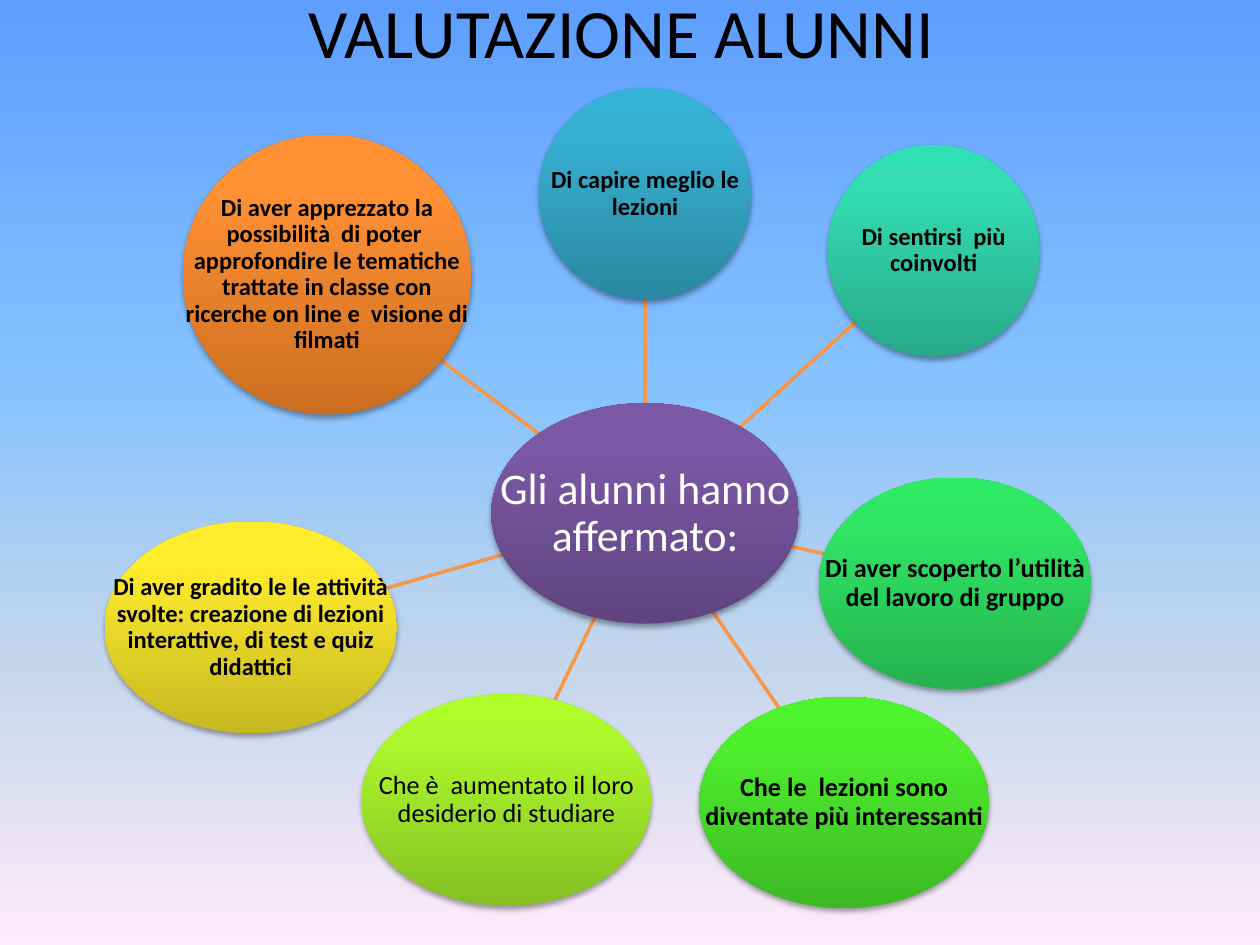
import math

import lxml.etree
import pptx
import pptx.dml.color
import pptx.enum.shapes
import pptx.enum.text
import pptx.oxml
import pptx.oxml.ns
import pptx.util

qn = pptx.oxml.ns.qn
CELL = pptx.util.Inches(0.1)  # the slide is a grid of 100 columns by 75 rows

COLORS = {
    "black": "000000",
    "white": "FFFFFF",
    "spoke": "F79646",
    "sky": ("5E9EFF", "85C2FF", "C4D6EB", "FFEBFA"),
    "purple": ("5F4480", "7B58A6", "7C57A8"),
    "blue": ("2A88A2", "37B1D2", "34B4D6"),
    "teal": ("27AA89", "33DCB2", "30E1B5"),
    "emerald": ("25B24E", "30E765", "2DEB64"),
    "green": ("3CB923", "4EF02E", "4CF52A"),
    "lime": ("85C022", "ADF92C", "AFFE28"),
    "yellow": ("C6B821", "FFEC2D", "FFED2E"),
    "orange": ("CC6E20", "FF9034", "FF9136"),
}
SHADOW = (
    '<a:effectLst xmlns:a="http://schemas.openxmlformats.org/drawingml/2006/main">'
    '<a:outerShdw blurRad="39370" dist="22860" dir="5400000" rotWithShape="0">'
    '<a:srgbClr val="000000"><a:alpha val="35000"/></a:srgbClr>'
    "</a:outerShdw></a:effectLst>"
)
HUB = (51.2, 40.75, 24.4, 17.5)  # centre column, centre row, columns, rows

# centre column, centre row, columns, rows, colour, size, bold, text
NODES = [
    (51.2, 15.4, 16.8, 16.8, "blue", 14, True, "Di capire meglio le lezioni"),
    (74.1, 19.9, 16.8, 16.8, "teal", 14, True, "Di sentirsi  più coinvolti"),
    (75.8, 46.3, 21.6, 16.8, "emerald", 15, True,
     "Di aver scoperto l’utilità del lavoro di gruppo"),
    (67, 63.7, 23, 16.8, "green", 15, True,
     "Che le  lezioni sono diventate più interessanti"),
    (40.2, 63.5, 23, 16.8, "lime", 15, False,
     "Che è  aumentato il loro desiderio di studiare"),
    (19.9, 49.8, 23.2, 16.8, "yellow", 14, True,
     "Di aver gradito le le attività svolte: creazione di lezioni "
     "interattive, di test e quiz didattici"),
    (25.95, 21.8, 22.9, 22.2, "orange", 14, True,
     "Di aver apprezzato la possibilità  di poter  approfondire le tematiche "
     "trattate in classe con ricerche on line e  visione di filmati"),
]


def set_gradient(fill, element, angle, positions, colors):
    fill.gradient()
    fill.gradient_angle = angle
    stops = element.find(".//" + qn("a:gsLst"))
    for stop in list(stops):
        stops.remove(stop)
    for position, color in zip(positions, colors):
        stop = lxml.etree.SubElement(stops, qn("a:gs"), pos=str(position * 1000))
        lxml.etree.SubElement(stop, qn("a:srgbClr"), val=color)


def add_label(x, y, w, h, text, size, bold, color, inset):
    box = s.shapes.add_textbox(*(round(v * CELL) for v in (x - w / 2, y - h / 2, w, h)))
    tf = box.text_frame
    frame = {"word_wrap": True, "vertical_anchor": pptx.enum.text.MSO_ANCHOR.MIDDLE}
    for side in ("left", "right", "top", "bottom"):
        frame["margin_" + side] = round(inset * CELL)
    for name, value in frame.items():
        setattr(tf, name, value)
    p = tf.paragraphs[0]
    p.alignment = pptx.enum.text.PP_ALIGN.CENTER
    p.line_spacing = 0.9
    r = p.add_run()
    r.text = text
    font = {"name": "Calibri", "size": pptx.util.Pt(size), "bold": bold}
    for name, value in font.items():
        setattr(r.font, name, value)
    r.font.color.rgb = pptx.dml.color.RGBColor.from_string(COLORS[color])


prs = pptx.Presentation()
prs.slide_width, prs.slide_height = 100 * CELL, 75 * CELL
s = prs.slides.add_slide(prs.slide_layouts[6])

# Background and title
set_gradient(s.background.fill, s.element, 270, (0, 40, 70, 100), COLORS["sky"])
add_label(49.3, 2.9, 90, 5.4, "VALUTAZIONE ALUNNI", 39.6, False, "black", 0)

# Spokes run along the centre lines, from the hub's edge to each node's edge
hub_x, hub_y, hub_w, hub_h = HUB
for x, y, w, h, *_ in NODES:
    dx, dy = x - hub_x, y - hub_y
    start = 0.5 / math.hypot(dx / hub_w, dy / hub_h)
    end = 1 - 0.5 / math.hypot(dx / w, dy / h)
    ends = [round(v * CELL) for t in (start, end)
            for v in (hub_x + t * dx, hub_y + t * dy)]
    spoke = s.shapes.add_connector(pptx.enum.shapes.MSO_CONNECTOR.STRAIGHT, *ends)
    spoke.line.width = pptx.util.Pt(2)
    spoke.line.color.rgb = pptx.dml.color.RGBColor.from_string(COLORS["spoke"])
    lxml.etree.SubElement(spoke.element.spPr, qn("a:effectLst"))

# Hub and nodes, each an ellipse with its label
hub = (*HUB, "purple", 25, False, "Gli alunni hanno affermato:")
for x, y, w, h, color, size, bold, text in [hub, *NODES]:
    bounds = [round(v * CELL) for v in (x - w / 2, y - h / 2, w, h)]
    sp = s.shapes.add_shape(pptx.enum.shapes.MSO_SHAPE.OVAL, *bounds)
    set_gradient(sp.fill, sp.element, 90, (0, 80, 100), COLORS[color])
    sp.line.fill.background()
    sp.element.spPr.append(pptx.oxml.parse_xml(SHADOW))
    is_hub = color == "purple"
    add_label(x, y, w, h, text, size, bold,
              "white" if is_hub else "black", 0.2 if is_hub else 0.1)

prs.save("out.pptx")
